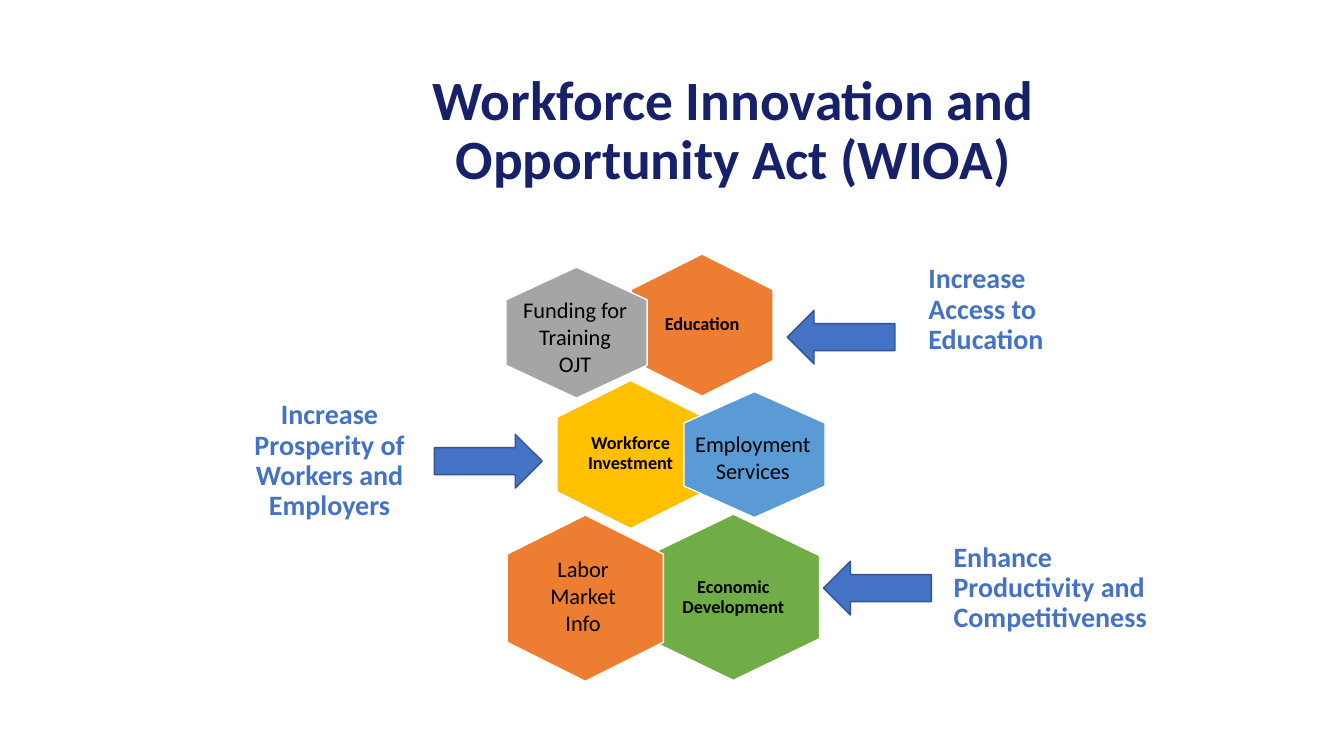
from collections import namedtuple

from pptx import Presentation
from pptx.dml.color import RGBColor
from pptx.enum.shapes import MSO_SHAPE
from pptx.enum.text import MSO_ANCHOR, MSO_AUTO_SIZE, PP_ALIGN
from pptx.util import Pt

HEXAGON = MSO_SHAPE.HEXAGON
LEFT_ARROW, RIGHT_ARROW = MSO_SHAPE.LEFT_ARROW, MSO_SHAPE.RIGHT_ARROW
LEFT, CENTER = PP_ALIGN.LEFT, PP_ALIGN.CENTER
MIDDLE, TOP = MSO_ANCHOR.MIDDLE, MSO_ANCHOR.TOP
NO_AUTOFIT = MSO_AUTO_SIZE.NONE
TITLE_ONLY = 5

Box = namedtuple("Box", "center_x center_y width height")
TextStyle = namedtuple("TextStyle", "size color bold anchor spacing inset_x inset_y")

THEME = {
    "font": "Calibri",
    "outline": "FFFFFF",
    "arrow": "4472C4",
    "arrow_outline": "325491",
    "title": TextStyle(39.6, "172169", True, MIDDLE, 0.9, 7.2, 3.6),
    "program": TextStyle(13, "000000", True, MIDDLE, 0.9, 3.6, 3.6),
    "goal": TextStyle(20, "4472C4", True, MIDDLE, 0.9, 5.8, 5.8),
    "service": TextStyle(16, "000000", False, TOP, 1, 7.2, 3.6),
}

TITLE = "Workforce Innovation and Opportunity Act (WIOA)"
TITLE_BOX = Box(523.8, 94.3, 599.8, 97.9)

HEXAGONS = [
    (Box(501.5, 232.2, 101.5, 101.5), "ED7D31"),
    (Box(411.8, 237.6, 100.8, 93.6), "A5A5A5"),
    (Box(450.4, 324.7, 105.1, 105.8), "FFC000"),
    (Box(538.9, 324.7, 100.8, 90), "5B9BD5"),
    (Box(523.8, 426.6, 123.1, 118.8), "70AD47"),
    (Box(418, 427.3, 111.6, 118.8), "ED7D31"),
]

ARROW_SIZE = (77, 38.4)
ARROWS = [
    (RIGHT_ARROW, 348.8, 329.4),
    (LEFT_ARROW, 600.8, 240.8),
    (LEFT_ARROW, 626.8, 420.1),
]

LABELS = [
    ("program", Box(501.5, 232.2, 67.7, 67.7), CENTER, "Education"),
    ("program", Box(450.4, 324.2, 69.8, 70.6), CENTER, "Workforce Investment"),
    ("program", Box(523.8, 427, 82.1, 79.2), CENTER, "Economic Development"),
    ("goal", Box(711, 221.4, 107.3, 58.3), LEFT, "Increase Access to Education"),
    ("goal", Box(235.4, 329.4, 138.2, 77), CENTER,
     "Increase Prosperity of Workers and Employers"),
    ("goal", Box(753.1, 420.5, 155.5, 82.1), LEFT,
     "Enhance Productivity and Competitiveness"),
    ("service", Box(410.8, 240.8, 101.5, 65.5), CENTER, "Funding for Training\nOJT"),
    ("service", Box(537.8, 326.9, 100.8, 46.1), CENTER, "Employment Services"),
    ("service", Box(416.5, 425.9, 68.4, 65.5), CENTER, "Labor Market\nInfo"),
]


def frame(box):
    left = box.center_x - box.width / 2
    top = box.center_y - box.height / 2
    return Pt(left), Pt(top), Pt(box.width), Pt(box.height)


def write_text(shape, text, style, alignment):
    text_frame = shape.text_frame
    text_frame.text = text
    text_frame.word_wrap = True
    text_frame.auto_size = NO_AUTOFIT
    text_frame.vertical_anchor = style.anchor
    text_frame.margin_left = text_frame.margin_right = Pt(style.inset_x)
    text_frame.margin_top = text_frame.margin_bottom = Pt(style.inset_y)
    for paragraph in text_frame.paragraphs:
        paragraph.alignment = alignment
        paragraph.line_spacing = style.spacing
        for run in paragraph.runs:
            run.font.name = THEME["font"]
            run.font.size = Pt(style.size)
            run.font.bold = style.bold
            run.font.color.rgb = RGBColor.from_string(style.color)


def add_filled_shape(slide, kind, box, fill, outline):
    shape = slide.shapes.add_shape(kind, *frame(box))
    shape.shadow.inherit = False
    shape.fill.solid()
    shape.fill.fore_color.rgb = RGBColor.from_string(fill)
    shape.line.color.rgb = RGBColor.from_string(outline)
    shape.line.width = Pt(1)
    return shape


def add_hexagon(slide, box, fill):
    unrotated = box._replace(width=box.height, height=box.width)
    hexagon = add_filled_shape(slide, HEXAGON, unrotated, fill, THEME["outline"])
    hexagon.rotation = 90
    hexagon.adjustments[0] = 0.25
    hexagon.adjustments[1] = 1.1547


def main():
    presentation = Presentation()
    presentation.slide_width, presentation.slide_height = Pt(960), Pt(540)
    slide = presentation.slides.add_slide(presentation.slide_layouts[TITLE_ONLY])

    title = slide.shapes.title
    title.left, title.top, title.width, title.height = frame(TITLE_BOX)
    write_text(title, TITLE, THEME["title"], CENTER)

    for box, fill in HEXAGONS:
        add_hexagon(slide, box, fill)
    for kind, center_x, center_y in ARROWS:
        box = Box(center_x, center_y, *ARROW_SIZE)
        add_filled_shape(slide, kind, box, THEME["arrow"], THEME["arrow_outline"])
    for role, box, alignment, text in LABELS:
        label = slide.shapes.add_textbox(*frame(box))
        write_text(label, text, THEME[role], alignment)

    presentation.save("out.pptx")


if __name__ == "__main__":
    main()
